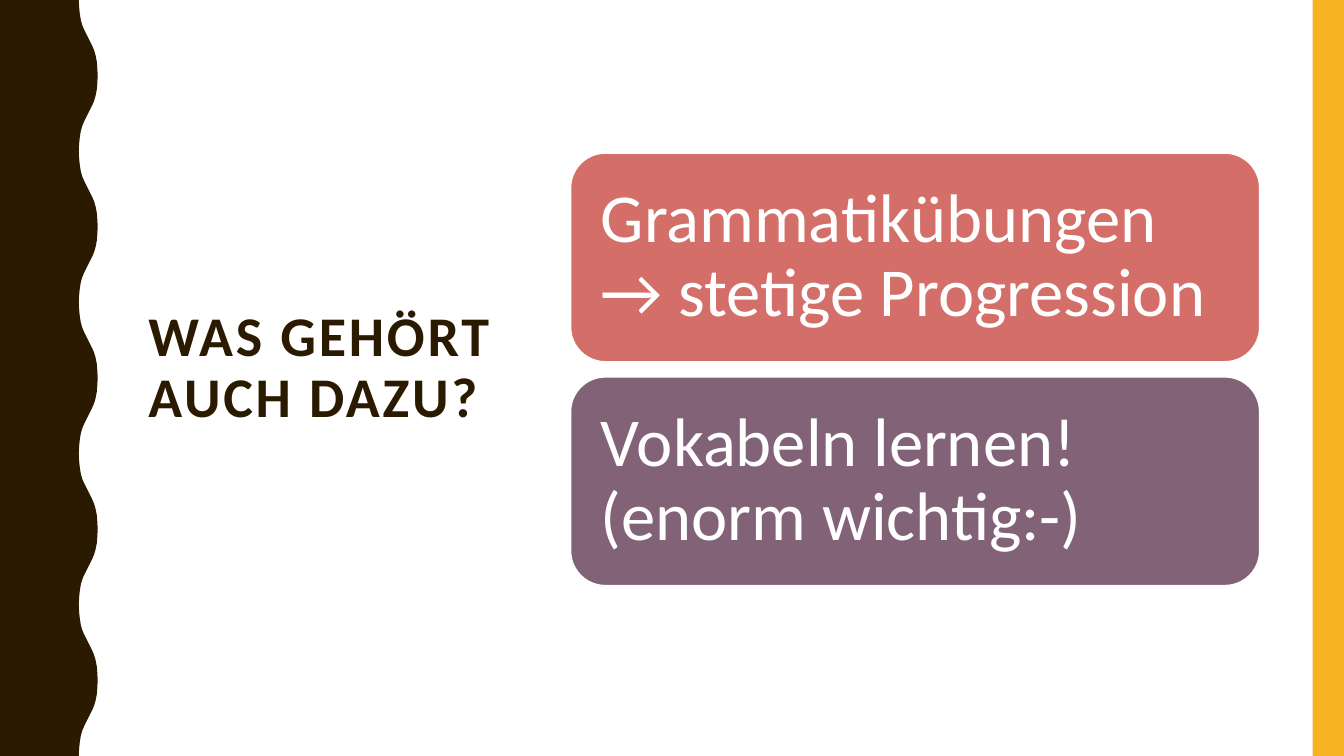
from collections import namedtuple
from dataclasses import dataclass

from pptx import Presentation
from pptx.dml.color import RGBColor
from pptx.enum.shapes import MSO_SHAPE
from pptx.enum.text import MSO_ANCHOR, MSO_AUTO_SIZE, PP_ALIGN
from pptx.util import Pt

Box = namedtuple("Box", "left top width height")


@dataclass(frozen=True)
class Theme:
    font: str = "Calibri"
    dark: str = "2A1A00"
    accent: str = "F8B323"
    white: str = "FFFFFF"
    red: str = "D36F68"
    plum: str = "826276"
    title_size: int = 40
    card_size: int = 49
    line_spacing: float = 0.9


THEME = Theme()
PAGE = Box(0, 0, 960, 540)
WAVE_COUNT = 5
# Half a wave from trough to crest: (distance outward, distance down)
WAVE_RISE = [(0, 0), (0.25, 5), (0.75, 10), (1.5, 14.5), (2.5, 18), (3.75, 21),
             (5.25, 24), (6.75, 27), (8.25, 30), (9.75, 33), (11, 36),
             (12, 39.5), (12.9, 44), (13.3, 49), (13.5, 54)]
CARDS = [("Grammatikübungen → stetige Progression", THEME.red),
         ("Vokabeln lernen! (enorm wichtig:-)", THEME.plum)]


def paint(shape, color):
    shape.shadow.inherit = False
    shape.fill.solid()
    shape.fill.fore_color.rgb = RGBColor.from_string(color)
    shape.line.fill.background()


def place(shape, box):
    shape.left, shape.top, shape.width, shape.height = map(Pt, box)


def write(frame, text, size, color, bold=False):
    frame.text = text
    frame.word_wrap = True
    frame.auto_size = MSO_AUTO_SIZE.NONE
    frame.vertical_anchor = MSO_ANCHOR.MIDDLE
    para = frame.paragraphs[0]
    para.alignment = PP_ALIGN.LEFT
    para.line_spacing = THEME.line_spacing
    font = para.runs[0].font
    font.name, font.size, font.bold = THEME.font, Pt(size), bold
    font.color.rgb = RGBColor.from_string(color)
    return para.runs[0]


def add_wave_band(slide, box):
    crest, half = WAVE_RISE[-1]
    trough = box.left + box.width - crest
    wave = WAVE_RISE + [(x, 2 * half - y) for x, y in WAVE_RISE[-2::-1]]
    edge = [(Pt(trough + x), Pt(box.top + 2 * half * index + y))
            for index in range(WAVE_COUNT) for x, y in wave]
    builder = slide.shapes.build_freeform(Pt(box.left), Pt(box.top))
    builder.add_line_segments(edge + [(Pt(box.left), Pt(box.top + box.height))])
    paint(builder.convert_to_shape(), THEME.dark)


def add_side_bar(slide, box):
    bar = slide.shapes.add_shape(MSO_SHAPE.RECTANGLE, *map(Pt, box))
    paint(bar, THEME.accent)


def add_title(slide, box, text):
    title = slide.shapes.title
    place(title, box)
    span = write(title.text_frame, text, THEME.title_size, THEME.dark, bold=True)
    span._r.get_or_add_rPr().set("spc", "200")


def add_cards(slide, box, cards, gap=10.8, inset=14.4):
    height = (box.height - gap * (len(cards) - 1)) / len(cards)
    for index, (text, color) in enumerate(cards):
        top = box.top + index * (height + gap)
        card = slide.shapes.add_shape(
            MSO_SHAPE.ROUNDED_RECTANGLE, *map(Pt, (box.left, top, box.width, height)))
        paint(card, color)
        card.line.color.rgb = RGBColor.from_string(THEME.white)
        card.line.width = Pt(1)
        frame = card.text_frame
        frame.margin_left = frame.margin_right = Pt(inset)
        frame.margin_top = frame.margin_bottom = Pt(inset)
        write(frame, text, THEME.card_size, THEME.white)


def add_topic_slide(deck, page):
    slide = deck.slides.add_slide(deck.slide_layouts[5])
    # Decorated edges
    add_wave_band(slide, Box(page.left, page.top, 69.75, page.height))
    add_side_bar(slide, Box(page.width - 22.4, page.top, 22.4, page.height))
    # Question on the left, answers on the right
    add_title(slide, Box(98.8, 50.4, 266.4, 426.2), "WAS GEHÖRT AUCH DAZU?")
    add_cards(slide, Box(407.6, 109.4, 492.2, 308.9), CARDS)


def main():
    deck = Presentation()
    deck.slide_width, deck.slide_height = Pt(PAGE.width), Pt(PAGE.height)
    add_topic_slide(deck, PAGE)
    deck.save("out.pptx")


if __name__ == "__main__":
    main()
